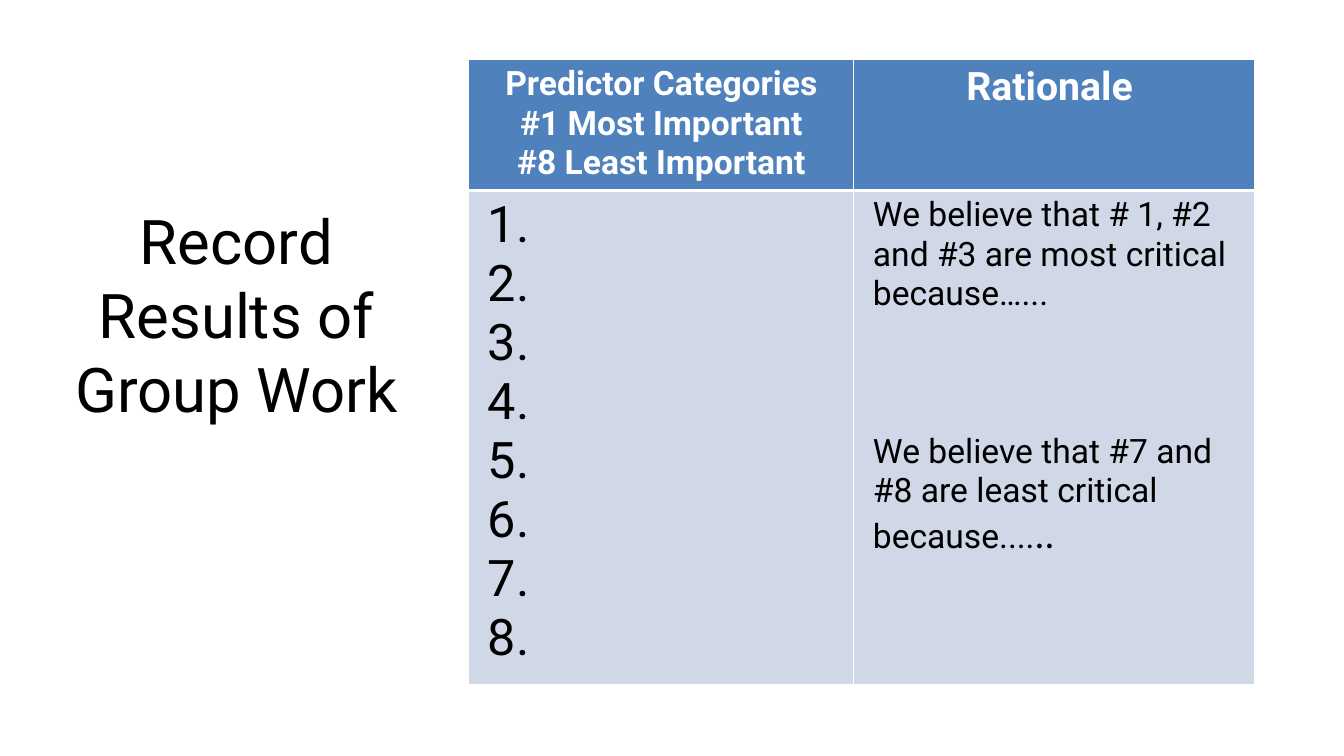
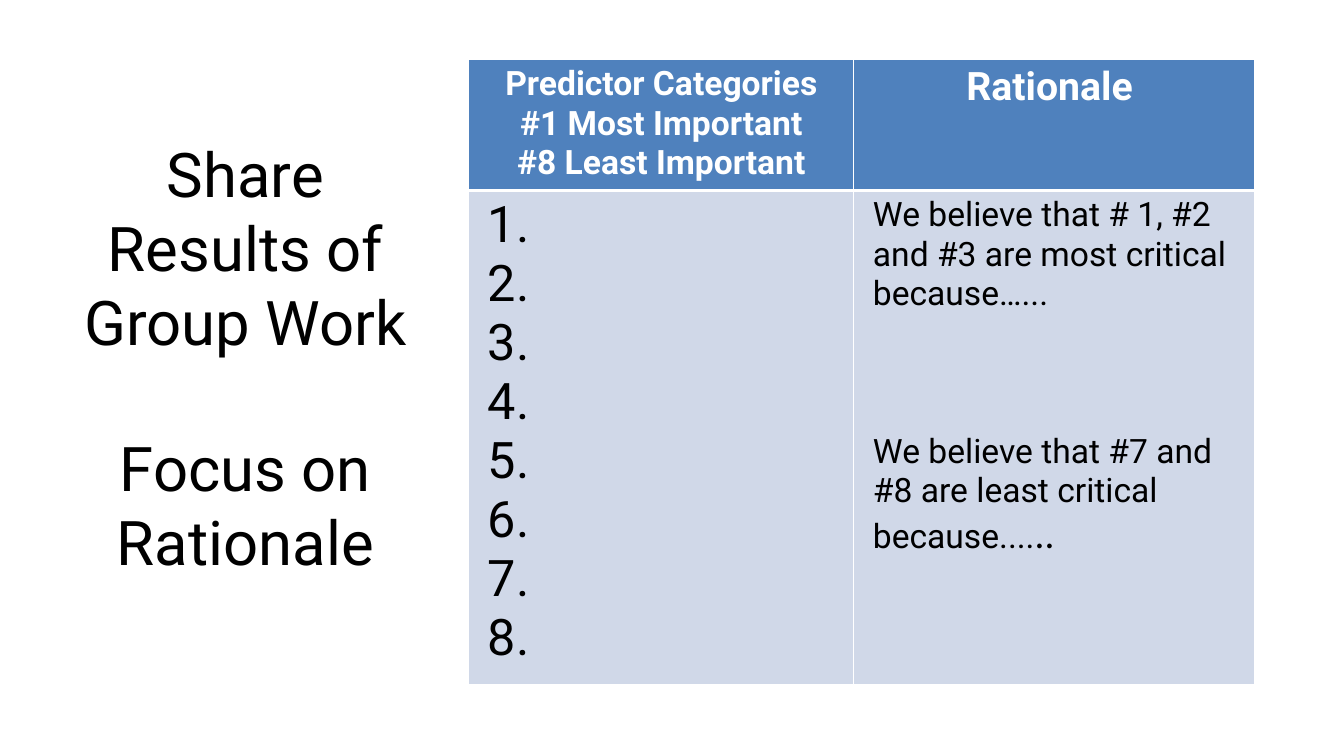
from pptx import Presentation
from pptx.dml.color import RGBColor
from pptx.enum.text import MSO_ANCHOR, PP_ALIGN
from pptx.oxml.ns import qn
from pptx.util import Inches, Pt
from lxml import etree

# Shared style
BLACK = RGBColor(0x00, 0x00, 0x00)
WHITE = RGBColor(0xFF, 0xFF, 0xFF)
HEADER_BLUE = RGBColor(0x4F, 0x81, 0xBD)
BODY_BLUE = RGBColor(0xD0, 0xD8, 0xE8)
FONT = "Roboto"
LINE_HEIGHT = 1.17  # Roboto line height as a share of its size
CENTER, LEFT = PP_ALIGN.CENTER, PP_ALIGN.LEFT
MIDDLE = MSO_ANCHOR.MIDDLE
SLIDE_WIDTH, SLIDE_HEIGHT = Inches(13.33), Inches(7.5)

# Places, in percent of the slide's width or height
TITLE_WIDTH, TITLE_HEIGHT = 26.78, 50
TABLE_LEFT, TABLE_TOP = 34.88, 7.87
COLUMN_WIDTHS = (28.65, 29.85)
ROW_HEIGHTS = (16.8, 63.9)
WIDE_INSET = Inches(0.19)

# Content
TITLES = (
    (["Record Results of Group Work"], 4.2, 41.47),
    (["Share Results of Group Work", "Focus on Rationale"], 4.88, 47.2),
)
CATEGORY_HEADING = ["Predictor Categories", "#1 Most Important", "#8 Least Important"]
RANKS = [f"{rank}." for rank in range(1, 9)]
RATIONALE = [
    "We believe that # 1, #2 and #3 are most critical because…...",
    "We believe that #7 and #8 are least critical because....",
]


def across(percent):
    return int(SLIDE_WIDTH * percent / 100)


def down(percent):
    return int(SLIDE_HEIGHT * percent / 100)


def add_span(para, text, size, color=BLACK, bold=False, font=FONT):
    span = para.add_run()
    span.text = text
    span.font.size = Pt(size)
    span.font.name = font
    span.font.bold = bold
    span.font.color.rgb = color


def write_text(frame, lines, size, align=LEFT, gap_lines=0, **style):
    """Write one paragraph per line, set apart by a number of empty lines."""
    for index, line in enumerate(lines):
        para = frame.add_paragraph() if index else frame.paragraphs[0]
        para.alignment = align
        if index and gap_lines:
            para.space_before = Pt(round(gap_lines * size * LINE_HEIGHT, 1))
        add_span(para, line, size, **style)


def add_title(slide, lines, left, middle):
    box = slide.shapes.add_textbox(across(left), down(middle - TITLE_HEIGHT / 2),
                                   across(TITLE_WIDTH), down(TITLE_HEIGHT))
    frame = box.text_frame
    frame.word_wrap = True
    frame.vertical_anchor = MIDDLE
    write_text(frame, lines, 44, align=CENTER, gap_lines=1)


def style_cell(cell, fill, top=1, bottom=1, inset=WIDE_INSET):
    """Set the insets, the white borders (widths in points) and the fill."""
    cell.margin_left = cell.margin_right = inset
    properties = cell._tc.get_or_add_tcPr()
    for side, width in (("L", 1), ("R", 1), ("T", top), ("B", bottom)):
        border = etree.SubElement(properties, qn(f"a:ln{side}"), w=str(Pt(width)))
        paint = etree.SubElement(border, qn("a:solidFill"))
        etree.SubElement(paint, qn("a:srgbClr"), val=str(WHITE))
    cell.fill.solid()
    cell.fill.fore_color.rgb = fill


def add_results_table(slide):
    table = slide.shapes.add_table(
        len(ROW_HEIGHTS), len(COLUMN_WIDTHS), across(TABLE_LEFT), down(TABLE_TOP),
        across(sum(COLUMN_WIDTHS)), down(sum(ROW_HEIGHTS))).table
    for column, width in zip(table.columns, COLUMN_WIDTHS):
        column.width = across(width)
    for row, height in zip(table.rows, ROW_HEIGHTS):
        row.height = down(height)

    # Header row
    categories, reasons = table.cell(0, 0), table.cell(0, 1)
    style_cell(categories, HEADER_BLUE, bottom=3, inset=Inches(0.1))
    style_cell(reasons, HEADER_BLUE, bottom=3)
    heading = {"align": CENTER, "color": WHITE, "bold": True}
    write_text(categories.text_frame, CATEGORY_HEADING, 24, **heading)
    write_text(reasons.text_frame, ["Rationale "], 28, **heading)

    # Body row
    ranks, reasons = table.cell(1, 0), table.cell(1, 1)
    for cell in (ranks, reasons):
        style_cell(cell, BODY_BLUE, top=3)
    write_text(ranks.text_frame, RANKS, 36)
    write_text(reasons.text_frame, RATIONALE, 24, gap_lines=3)
    add_span(reasons.text_frame.paragraphs[-1], "..", 28, font="Calibri")


def main():
    deck = Presentation()
    deck.slide_width, deck.slide_height = SLIDE_WIDTH, SLIDE_HEIGHT
    blank = deck.slide_layouts[6]
    for lines, left, middle in TITLES:
        page = deck.slides.add_slide(blank)
        add_title(page, lines, left, middle)
        add_results_table(page)
    deck.save("out.pptx")


if __name__ == "__main__":
    main()
